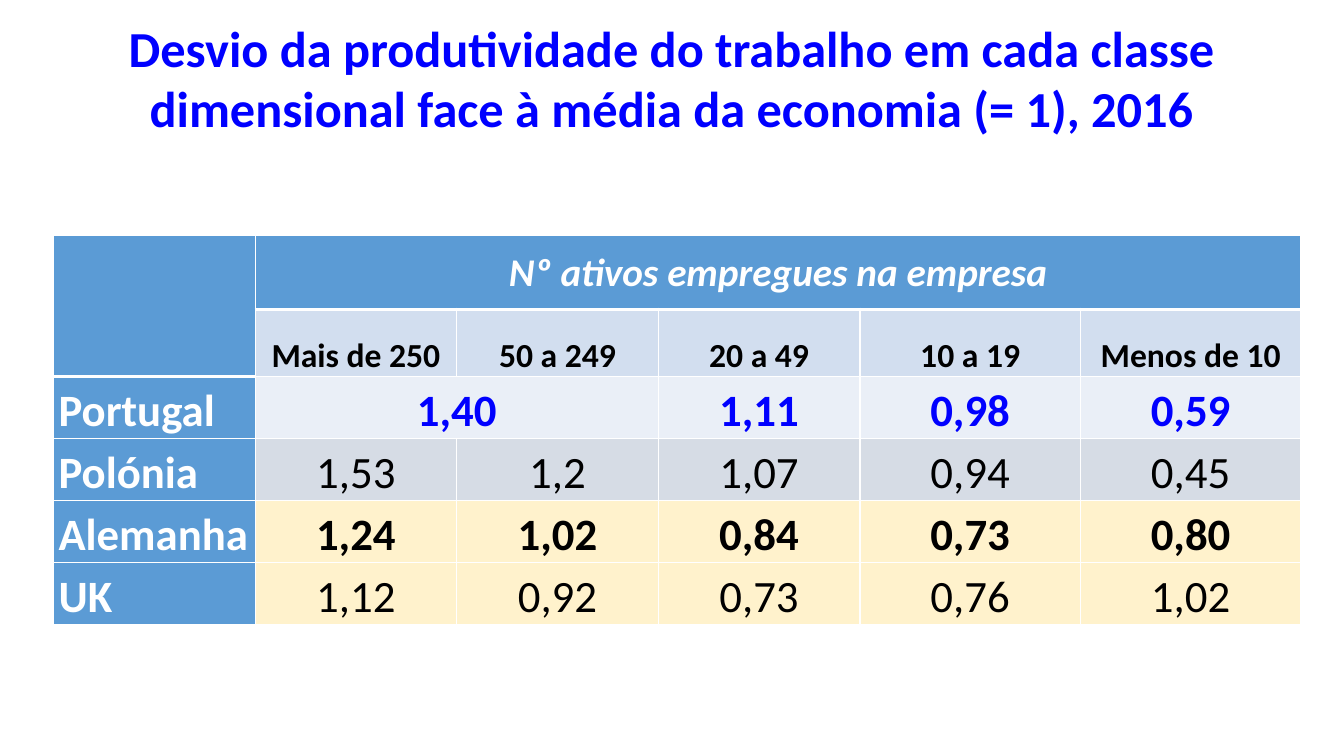
"""Build the slide on labour productivity by company size class."""
from dataclasses import dataclass

from pptx import Presentation, table as t, util as u
from pptx.dml import color, fill as f
from pptx.enum import text as e
from pptx.oxml import ns, xmlchemy as x
from pptx.slide import Slide
from pptx.text import text as tx

FONT = "Calibri"
WHITE, BLACK, BLUE = "FFFFFF", "000000", "0000FF"
HEADER_FILL, SIZE_CLASS_FILL = "5B9BD5", "D2DEEF"
SIZE_CLASSES = ["Mais de 250", "50 a 249", "20 a 49", "10 a 19", "Menos de 10"]
COLUMN_WIDTHS = [144] * 4 + [157.5] * 2
ROW_HEIGHTS = [52.5, 48] + [44.25] * 4
THIN, THICK = 1, 3


@dataclass
class Country:
    """One country row of the table."""
    name: str
    values: list[str]
    fill: str
    color: str = BLACK
    bold: bool = False


COUNTRIES = [
    Country("Portugal", ["1,40", "", "1,11", "0,98", "0,59"], "EAEFF7", BLUE, True),
    Country("Polónia", ["1,53", "1,2", "1,07", "0,94", "0,45"], "D6DCE5"),
    Country("Alemanha", ["1,24", "1,02", "0,84", "0,73", "0,80"], "FFF2CC", bold=True),
    Country("UK", ["1,12", "0,92", "0,73", "0,76", "1,02"], "FFF2CC"),
]


def rgb(value: str) -> color.RGBColor:
    """Turn a hex string into a colour."""
    return color.RGBColor.from_string(value)


def paint(fill: f.FillFormat, value: str) -> None:
    """Apply a solid fill."""
    fill.solid()
    fill.fore_color.rgb = rgb(value)


def write(frame: tx.TextFrame, content: str, *, size: float, color: str,
          bold: bool = True, italic: bool = False, centered: bool = True,
          spacing: float = 0) -> None:
    """Write one formatted paragraph into a text frame."""
    frame.word_wrap = True
    paragraph = frame.paragraphs[0]
    paragraph.alignment = e.PP_ALIGN.CENTER if centered else e.PP_ALIGN.LEFT
    paragraph.space_before = paragraph.space_after = u.Pt(spacing)
    run = paragraph.add_run()
    run.text = content
    run.font.name, run.font.size = FONT, u.Pt(size)
    run.font.bold, run.font.italic = bold, italic
    run.font.color.rgb = rgb(color)


def add_border(properties: x.BaseOxmlElement, side: str, width: float) -> None:
    """Add a white border to one side of a cell."""
    line = properties.makeelement(ns.qn(f"a:ln{side}"), {"w": str(u.Pt(width))})
    properties.append(line)
    solid = line.makeelement(ns.qn("a:solidFill"), {})
    line.append(solid)
    solid.append(solid.makeelement(ns.qn("a:srgbClr"), {"val": WHITE}))


def style_cell(cell: t._Cell, row: int, column: int, fill: str) -> None:
    """Set the margins, anchor, borders and fill of a cell."""
    cell.margin_left = cell.margin_right = u.Pt(3.6)
    cell.margin_top = cell.margin_bottom = u.Pt(0)
    cell.vertical_anchor = e.MSO_ANCHOR.BOTTOM if row else e.MSO_ANCHOR.MIDDLE
    header_end = 0 if column else 1
    widths = {"L": THIN, "R": THIN,
              "T": THICK if row == header_end + 1 else THIN,
              "B": THICK if row <= header_end else THIN}
    for side, width in widths.items():
        add_border(cell._tc.get_or_add_tcPr(), side, width)
    paint(cell.fill, fill)


def add_productivity_table(slide: Slide) -> None:
    """Add the table of productivity by country and size class."""
    grid = slide.shapes.add_table(
        len(ROW_HEIGHTS), len(COLUMN_WIDTHS), u.Pt(38.25), u.Pt(168.5),
        u.Pt(sum(COLUMN_WIDTHS)), u.Pt(sum(ROW_HEIGHTS))).table
    grid.first_row = grid.horz_banding = False
    for column, width in zip(grid.columns, COLUMN_WIDTHS):
        column.width = u.Pt(width)
    for row, height in zip(grid.rows, ROW_HEIGHTS):
        row.height = u.Pt(height)

    row_fills = [HEADER_FILL, SIZE_CLASS_FILL] + [country.fill for country in COUNTRIES]
    for row, row_fill in enumerate(row_fills):
        for column in range(len(COLUMN_WIDTHS)):
            style_cell(grid.cell(row, column), row, column,
                       row_fill if column else HEADER_FILL)
    for first, last in [((0, 0), (1, 0)), ((0, 1), (0, 5)), ((2, 1), (2, 2))]:
        grid.cell(*first).merge(grid.cell(*last))

    write(grid.cell(0, 1).text_frame, "Nº ativos empregues na empresa",
          size=28, color=WHITE, italic=True)
    for column, label in enumerate(SIZE_CLASSES, 1):
        write(grid.cell(1, column).text_frame, label, size=24, color=BLACK, spacing=12)
    for row, country in enumerate(COUNTRIES, 2):
        write(grid.cell(row, 0).text_frame, country.name,
              size=32, color=WHITE, centered=False)
        for column, value in enumerate(country.values, 1):
            if value:
                write(grid.cell(row, column).text_frame, value, size=32,
                      color=country.color, bold=country.bold)


def main() -> None:
    """Create and save the presentation."""
    presentation = Presentation()
    presentation.slide_width, presentation.slide_height = u.Pt(960), u.Pt(540)
    slide = presentation.slides.add_slide(presentation.slide_layouts[6])
    add_productivity_table(slide)
    title = slide.shapes.add_textbox(u.Pt(0), u.Pt(8.64), u.Pt(960), u.Pt(94.5))
    write(title.text_frame,
          "Desvio da produtividade do trabalho em cada classe dimensional "
          "face à média da economia (= 1), 2016", size=36, color=BLUE)
    title.text_frame.auto_size = e.MSO_AUTO_SIZE.SHAPE_TO_FIT_TEXT
    presentation.save("out.pptx")


if __name__ == "__main__":
    main()
